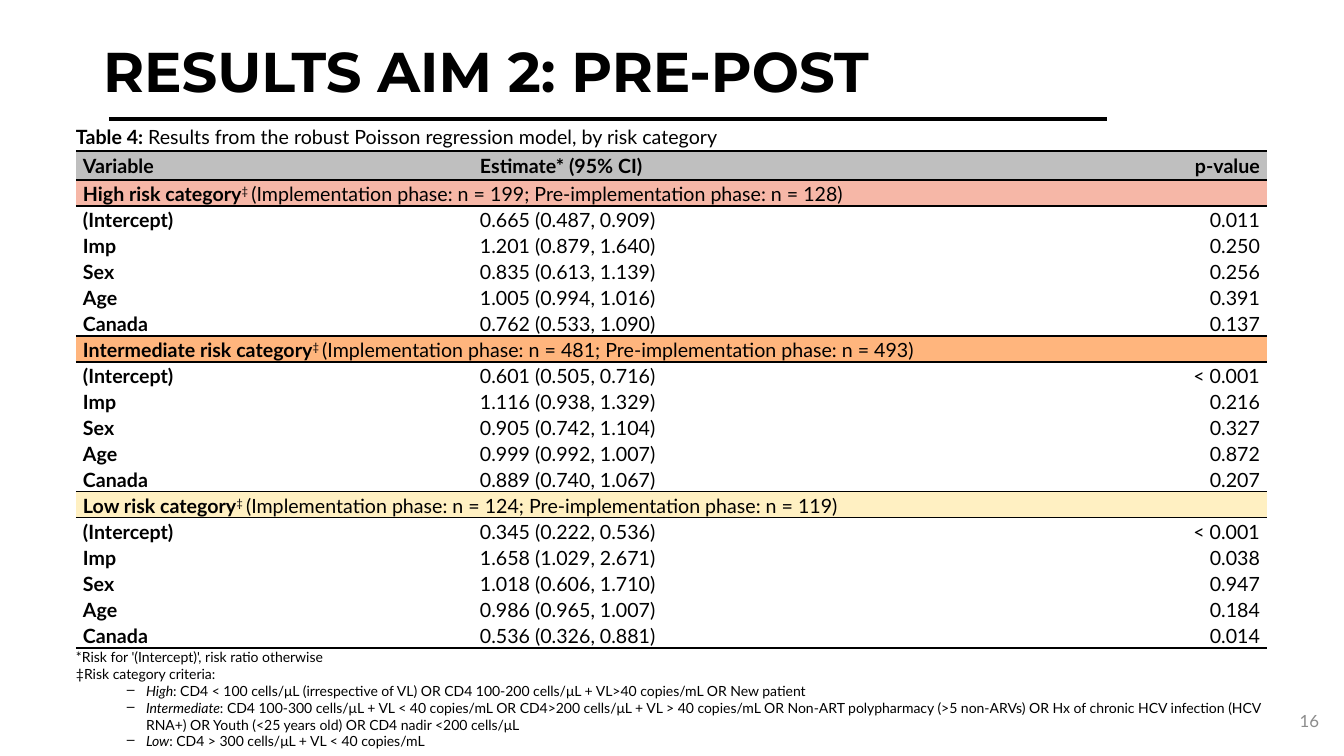
from lxml.etree import SubElement
from pptx import Presentation
from pptx.dml.color import RGBColor
from pptx.enum.shapes import MSO_CONNECTOR as CONN
from pptx.enum.text import MSO_ANCHOR as ANCHOR, MSO_AUTO_SIZE as AUTO, PP_ALIGN as ALIGN
from pptx.oxml.ns import qn
from pptx.util import Emu, Pt

PX = 9071
BLACK = RGBColor(0x00, 0x00, 0x00)
WHITE = RGBColor(0xFF, 0xFF, 0xFF)
GREY = RGBColor(0xBF, 0xBF, 0xBF)
PAGE_GREY = RGBColor(0x8C, 0x8C, 0x8C)
RED = RGBColor(0xF6, 0xB7, 0xA7)
ORANGE = RGBColor(0xFF, 0xB5, 0x7D)
YELLOW = RGBColor(0xFF, 0xF0, 0xC2)

VARIABLES = ["(Intercept)", "Imp", "Sex", "Age", "Canada"]
CATEGORIES = [
    ("High", RED, 199, 128, [
        ("0.665 (0.487, 0.909)", "0.011"),
        ("1.201 (0.879, 1.640)", "0.250"),
        ("0.835 (0.613, 1.139)", "0.256"),
        ("1.005 (0.994, 1.016)", "0.391"),
        ("0.762 (0.533, 1.090)", "0.137")]),
    ("Intermediate", ORANGE, 481, 493, [
        ("0.601 (0.505, 0.716)", "< 0.001"),
        ("1.116 (0.938, 1.329)", "0.216"),
        ("0.905 (0.742, 1.104)", "0.327"),
        ("0.999 (0.992, 1.007)", "0.872"),
        ("0.889 (0.740, 1.067)", "0.207")]),
    ("Low", YELLOW, 124, 119, [
        ("0.345 (0.222, 0.536)", "< 0.001"),
        ("1.658 (1.029, 2.671)", "0.038"),
        ("1.018 (0.606, 1.710)", "0.947"),
        ("0.986 (0.965, 1.007)", "0.184"),
        ("0.536 (0.326, 0.881)", "0.014")]),
]
CRITERIA = [
    ("High", ": CD4 < 100 cells/μL (irrespective of VL) OR CD4 100-200 cells/μL"
             " + VL>40 copies/mL OR New patient"),
    ("Intermediate", ": CD4 100-300 cells/μL + VL < 40 copies/mL OR CD4>200 cells/μL"
                     " + VL > 40 copies/mL OR Non-ART polypharmacy (>5 non-ARVs)"
                     " OR Hx of chronic HCV infection (HCV RNA+)"
                     " OR Youth (<25 years old) OR CD4 nadir <200 cells/μL"),
    ("Low", ": CD4 > 300 cells/μL + VL < 40 copies/mL"),
]
RULES = {1: 1.5, 2: 1.5, 3: 1, 8: 1, 9: 1, 14: 1, 15: 1, 20: 1.5}


def set_font(p, size, color=BLACK, name="Lato"):
    p.font.size = Pt(size)
    p.font.name = name
    p.font.color.rgb = color


def add_border(tc_pr, side, width):
    ln = SubElement(tc_pr, qn(f"a:ln{side}"), w=str(Pt(width or 0)))
    if width:
        fill = SubElement(ln, qn("a:solidFill"))
        SubElement(fill, qn("a:srgbClr"), val=str(BLACK))
    else:
        SubElement(ln, qn("a:noFill"))


prs = Presentation()
prs.slide_width, prs.slide_height = Emu(1344 * PX), Emu(756 * PX)
slide = prs.slides.add_slide(prs.slide_layouts[5])

title = slide.shapes.title
title.left, title.top, title.width, title.height = [Emu(v * PX) for v in (93, 1, 1159, 146)]
tf = title.text_frame
tf.text = "RESULTS AIM 2: PRE-POST"
tf.auto_size = AUTO.NONE
tf.vertical_anchor = ANCHOR.MIDDLE
p = tf.paragraphs[0]
p.alignment = ALIGN.LEFT
p.line_spacing = 0.9
p.font.bold = True
set_font(p, 40, name="Montserrat")

line = slide.shapes.add_connector(CONN.STRAIGHT, *[Emu(v * PX) for v in (109, 119, 1107, 119)])
line.line.color.rgb = BLACK
line.line.width = Pt(2.25)
SubElement(line._element.spPr, qn("a:effectLst"))

rows = [("Variable", "Estimate* (95% CI)", "p-value")]
fills = {1: GREY}
for name, color, imp, pre, results in CATEGORIES:
    fills[len(rows) + 1] = color
    rows.append((name, imp, pre))
    rows += [(variable, *result) for variable, result in zip(VARIABLES, results)]
last = len(rows) + 1

frame = slide.shapes.add_table(last + 1, 3, *[Emu(v * PX) for v in (76, 122, 1191, 630)])
table = frame.table
table.first_row = table.horz_banding = False
for col in table.columns:
    col.width = Emu(397 * PX)
for i, row in enumerate(table.rows):
    row.height = Emu({0: 29, 1: 29, last: 102}.get(i, 26) * PX)
    for cell in row.cells:
        side_margin = 0 if i in (0, last) else 7 * PX
        cell.margin_left = cell.margin_right = Emu(side_margin)
        cell.margin_top = cell.margin_bottom = 0
        cell.vertical_anchor = ANCHOR.MIDDLE
        tc_pr = cell._tc.get_or_add_tcPr()
        for side, width in (("L", None), ("R", None), ("T", RULES.get(i)), ("B", RULES.get(i + 1))):
            add_border(tc_pr, side, width)
        cell.fill.solid()
        cell.fill.fore_color.rgb = fills.get(i, WHITE)
        p = cell.text_frame.paragraphs[0]
        p.line_spacing = 1.07
        set_font(p, 10 if i == last else 14)
        if 0 < i < last:
            p.space_before = p.space_after = Pt(2)
    if i in (0, last) or fills.get(i, GREY) != GREY:
        row.cells[0].merge(row.cells[2])

p = table.cell(0, 0).text_frame.paragraphs[0]
for text, bold in (("Table 4: ", True),
                   ("Results from the robust Poisson regression model, by risk category", False)):
    r = p.add_run()
    r.text, r.font.bold = text, bold

for i, values in enumerate(rows, 1):
    if fills.get(i, GREY) != GREY:
        name, imp, pre = values
        p = table.cell(i, 0).text_frame.paragraphs[0]
        counts = f"(Implementation phase: n = {imp}; Pre-implementation phase: n = {pre})"
        for text, bold, baseline in ((f"{name} risk category", True, 0), ("‡ ", False, 30000),
                                     (counts, False, 0)):
            r = p.add_run()
            r.text, r.font.bold = text, bold
            r._r.get_or_add_rPr().set("baseline", str(baseline))
        continue
    for j, text in enumerate(values):
        p = table.cell(i, j).text_frame.paragraphs[0]
        p.add_run().text = text
        p.font.bold = i == 1 or j == 0
        p.alignment = ALIGN.RIGHT if j == 2 else ALIGN.LEFT

tf = table.cell(last, 0).text_frame
tf.paragraphs[0].add_run().text = "*Risk for '(Intercept)', risk ratio otherwise"
p = tf.add_paragraph()
p.text = "‡Risk category criteria:"
set_font(p, 10)
for name, rule in CRITERIA:
    p = tf.add_paragraph()
    p.level = 1
    set_font(p, 10)
    p_pr = p._p.get_or_add_pPr()
    p_pr.set("marL", str(70 * PX))
    p_pr.set("indent", str(-19 * PX))
    bullet = p_pr.makeelement(qn("a:buChar"), {"char": "–"})
    p_pr.insert(0, bullet)
    for text, italic in ((name, True), (rule, False)):
        r = p.add_run()
        r.text, r.font.italic = text, italic

page = slide.shapes.add_textbox(*[Emu(v * PX) for v in (1027, 701, 302, 40)])
tf = page.text_frame
tf.word_wrap = True
tf.vertical_anchor = ANCHOR.MIDDLE
p = tf.paragraphs[0]
p.text = "16"
p.alignment = ALIGN.RIGHT
set_font(p, 12, PAGE_GREY)

prs.save("out.pptx")
